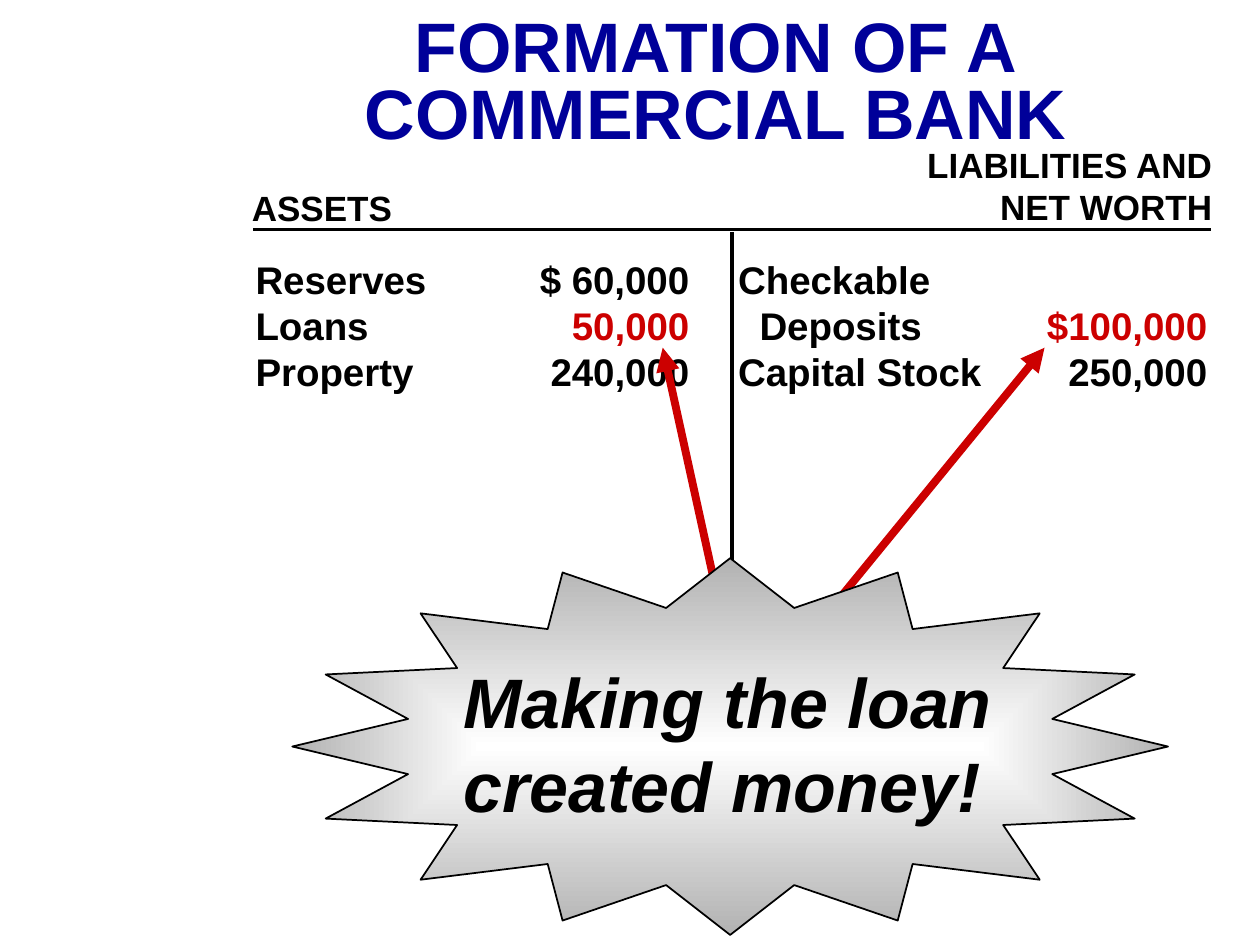
from dataclasses import dataclass

from lxml.etree import SubElement
from pptx import Presentation
from pptx.dml.color import RGBColor
from pptx.enum.shapes import MSO_CONNECTOR, MSO_SHAPE
from pptx.enum.text import PP_ALIGN
from pptx.oxml import parse_xml
from pptx.oxml.ns import nsdecls, qn
from pptx.slide import Slide
from pptx.util import Inches, Pt


@dataclass(frozen=True)
class Theme:
    font: str = "Arial"
    ink: str = "000000"
    title: str = "000099"
    accent: str = "CC0000"
    glow: str = "FFFFFF"
    shade: str = "B2B2B2"
    display: float = 40
    entry: float = 22
    heading: float = 20
    rule: float = 2
    arrow: float = 4.5
    outline: float = 1


THEME = Theme()


@dataclass(frozen=True)
class Row:
    text: str
    color: str = THEME.ink
    indent: float = 0


@dataclass(frozen=True)
class Block:
    box: tuple[float, float, float, float]
    rows: tuple[Row, ...]
    size: float
    align: PP_ALIGN = PP_ALIGN.LEFT
    spacing: float = 1
    italic: bool = False


@dataclass(frozen=True)
class Line:
    start: tuple[float, float]
    end: tuple[float, float]
    color: str
    width: float
    arrow: bool = False


RULES = (
    Line((2.01, 1.82), (9.61, 1.82), THEME.ink, THEME.rule),
    Line((5.81, 1.84), (5.81, 5.91), THEME.ink, THEME.rule),
)
ARROWS = (
    Line((6.63, 4.79), (8.29, 2.76), THEME.accent, THEME.arrow, True),
    Line((5.7, 4.76), (5.26, 2.76), THEME.accent, THEME.arrow, True),
)
ENTRY_TOP = 1.98
ENTRY_PITCH = 0.37
BLOCKS = (
    Block((1.93, ENTRY_TOP, 1.9, 1.2),
          (Row("Reserves"), Row("Loans"), Row("Property")), THEME.entry),
    Block((3.97, ENTRY_TOP, 1.6, 1.2),
          (Row("$ 60,000"), Row("50,000", THEME.accent), Row("240,000")),
          THEME.entry, PP_ALIGN.RIGHT),
    Block((5.76, ENTRY_TOP, 2.3, 1.2),
          (Row("Checkable"), Row("Deposits", indent=0.17), Row("Capital Stock")),
          THEME.entry),
    Block((8.08, ENTRY_TOP + ENTRY_PITCH, 1.6, 0.83),
          (Row("$100,000", THEME.accent), Row("250,000")),
          THEME.entry, PP_ALIGN.RIGHT),
    Block((2.69, 0.1, 5.98, 1.16),
          (Row("FORMATION OF A", THEME.title), Row("COMMERCIAL BANK", THEME.title)),
          THEME.display, PP_ALIGN.CENTER, 0.8),
    Block((1.9, 1.43, 1.6, 0.43), (Row("ASSETS"),), THEME.heading),
    Block((7.12, 1.09, 2.6, 0.76), (Row("LIABILITIES AND"), Row("NET WORTH")),
          THEME.heading, PP_ALIGN.RIGHT),
)
BURST_BOX = (2.32, 4.43, 6.95, 2.99)
BURST_TEXT = Block((3.58, 5.18, 4.6, 1.43),
                   (Row("Making the loan"), Row("created money!")),
                   THEME.display, italic=True)


def draw_block(s: Slide, block: Block) -> None:
    """Draw a text box with one paragraph for each row."""
    tf = s.shapes.add_textbox(*map(Inches, block.box)).text_frame
    tf.word_wrap = True
    for i, row in enumerate(block.rows):
        p = tf.add_paragraph() if i else tf.paragraphs[0]
        p.alignment = block.align
        p.line_spacing = block.spacing
        if row.indent:
            p._p.get_or_add_pPr().set("marL", str(Inches(row.indent)))
        r = p.add_run()
        r.text = row.text
        r.font.name = THEME.font
        r.font.size = Pt(block.size)
        r.font.bold = True
        r.font.italic = block.italic
        r.font.color.rgb = RGBColor.from_string(row.color)


def draw_line(s: Slide, line: Line) -> None:
    """Draw a straight line, with an arrowhead at its end if asked."""
    sp = s.shapes.add_connector(
        MSO_CONNECTOR.STRAIGHT, *map(Inches, line.start + line.end))
    sp.line.color.rgb = RGBColor.from_string(line.color)
    sp.line.width = Pt(line.width)
    if line.arrow:
        SubElement(sp.line._get_or_add_ln(), qn("a:tailEnd"), type="triangle")
    SubElement(sp._element.spPr, qn("a:effectLst"))


def draw_burst(s: Slide) -> None:
    """Draw the star with a gradient that glows from its centre."""
    sp = s.shapes.add_shape(MSO_SHAPE.STAR_16_POINT, *map(Inches, BURST_BOX))
    sp.adjustments[0] = 0.375
    sp.shadow.inherit = False
    sp.line.color.rgb = RGBColor.from_string(THEME.ink)
    sp.line.width = Pt(THEME.outline)
    grad = parse_xml(
        f'<a:gradFill {nsdecls("a")} rotWithShape="1"><a:gsLst>'
        f'<a:gs pos="0"><a:srgbClr val="{THEME.glow}"/></a:gs>'
        f'<a:gs pos="100000"><a:srgbClr val="{THEME.shade}"/></a:gs></a:gsLst>'
        '<a:path path="shape"><a:fillToRect l="50000" t="50000" r="50000" b="50000"/>'
        '</a:path></a:gradFill>')
    sp._element.spPr.find(qn("a:prstGeom")).addnext(grad)


def main() -> None:
    """Build the slide and save it."""
    prs = Presentation()
    prs.slide_width, prs.slide_height = Inches(10), Inches(7.5)
    s = prs.slides.add_slide(prs.slide_layouts[6])
    for line in RULES:
        draw_line(s, line)
    for block in BLOCKS:
        draw_block(s, block)
    for line in ARROWS:
        draw_line(s, line)
    draw_burst(s)
    draw_block(s, BURST_TEXT)
    prs.save("out.pptx")


if __name__ == "__main__":
    main()
